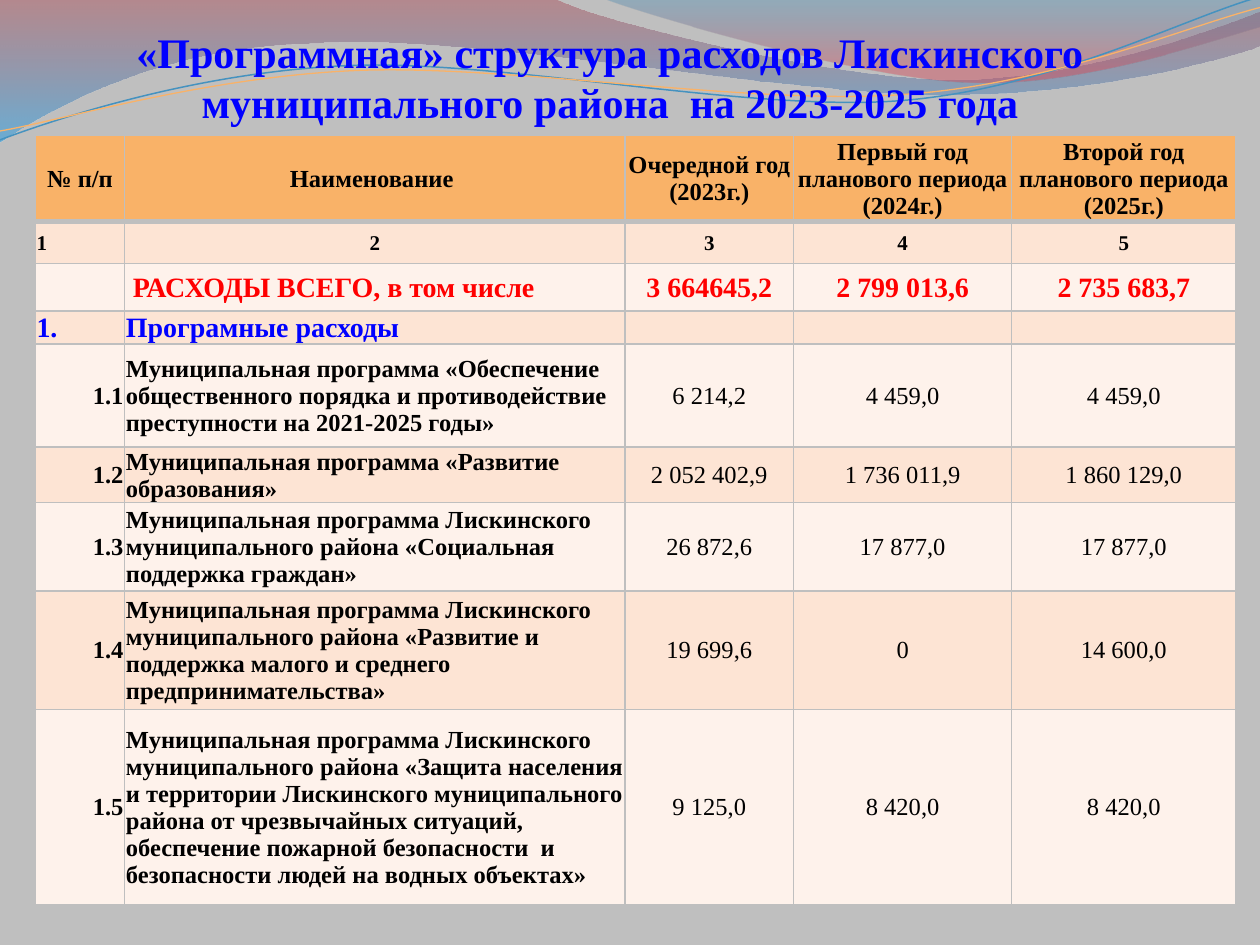
from dataclasses import dataclass
from itertools import chain
from math import cos, radians, sin

from lxml.etree import SubElement
from pptx import Presentation
from pptx.dml.color import RGBColor as RGB
from pptx.enum.text import MSO_ANCHOR as ANCHOR, MSO_AUTO_SIZE as AUTOSIZE, PP_ALIGN as ALIGN
from pptx.oxml.ns import qn
from pptx.util import Inches, Pt


@dataclass(frozen=True)
class Theme:
    """Colours, font and type sizes of the slide."""
    font: str = "Times New Roman"
    background: str = "BFBFBF"
    header: str = "F9B268"
    band_dark: str = "FDE4D4"
    band_light: str = "FEF2EB"
    text: str = "000000"
    accent: str = "0000FF"
    total: str = "FF0000"
    title_size: int = 24
    section_size: int = 16
    body_size: int = 14
    index_size: int = 12


T = Theme()

COLUMNS = [0.71, 3.97, 1.34, 1.73, 1.78]
HEIGHTS = [0.69, 0.33, 0.38, 0.26, 0.82, 0.44, 0.7, 0.94, 1.55]
HEADER = ["№ п/п", "Наименование ", "Очередной год (2023г.)",
          "Первый год планового периода (2024г.)", "Второй год планового периода (2025г.)"]
INDEX = ["1", "2", "3", "4", "5"]
TOTAL = ["", " РАСХОДЫ ВСЕГО, в том числе", "3 664645,2", "2 799 013,6", "2 735 683,7"]
SECTION = ["1.", "Програмные расходы", "", "", ""]
PROGRAMS = [
    ["1.1", "Муниципальная программа «Обеспечение общественного порядка и противодействие "
     "преступности на 2021-2025 годы»", "6 214,2", "4 459,0", "4 459,0"],
    ["1.2", "Муниципальная программа «Развитие образования»",
     "2 052 402,9", "1 736 011,9", "1 860 129,0"],
    ["1.3", "Муниципальная программа Лискинского муниципального района «Социальная "
     "поддержка граждан»", "26 872,6", "17 877,0", "17 877,0"],
    ["1.4", "Муниципальная программа Лискинского муниципального района «Развитие и поддержка "
     "малого и среднего предпринимательства»", "19 699,6", "0", "14 600,0"],
    ["1.5", "Муниципальная программа Лискинского муниципального района «Защита населения и "
     "территории Лискинского муниципального района от чрезвычайных ситуаций, обеспечение "
     "пожарной безопасности  и безопасности людей на водных объектах»",
     "9 125,0", "8 420,0", "8 420,0"],
]

LEFT_WAVE = [
    (0, 0), (4.4, -0.01), (4.76, 0.17, 6.64, 0.63, 7.58, 0.63), (8.53, 0.63, 9.58, 0.26, 10, 0.09),
    (10.01, 0.36), (9.83, 0.44, 8.7, 0.76, 7.46, 0.75), (6.22, 0.75, 3.82, 0.28, 2.57, 0.34),
    (1.29, 0.36, 0.46, 0.83, -0.01, 1.13)]
RIGHT_WAVE = [
    (4.79, -0.01), (5.09, 0.11, 6.82, 0.62, 7.69, 0.65), (8.56, 0.69, 9.61, 0.32, 10, 0.21), (10, 0)]
BLUE_LINE = [
    (0, 1.11), (0.48, 0.93, 1.58, 0.57, 2.77, 0.52), (3.95, 0.47, 5.93, 0.89, 7.13, 0.8),
    (8.33, 0.71, 9.38, 0.15, 9.98, -0.02)]
ORANGE_LINE = [
    (0, 1.04), (0.47, 0.96, 1.64, 0.61, 2.83, 0.56), (4.03, 0.51, 5.97, 0.84, 7.17, 0.75),
    (8.36, 0.67, 9.41, 0.21, 10, 0.06)]
TILT = 2.7


def turn(step, center, degrees):
    """Rotate the points of one step about a center."""
    a, (cx, cy) = radians(degrees), center
    pairs = [(x - cx, y - cy) for x, y in zip(step[::2], step[1::2])]
    return tuple(chain.from_iterable(
        (cx + x * cos(a) - y * sin(a), cy + x * sin(a) + y * cos(a)) for x, y in pairs))


class Deck:
    """Holds the theme and the current slide."""

    def __init__(self, prs, theme):
        """Add a title-only slide with a plain background."""
        self.theme = theme
        self.s = prs.slides.add_slide(prs.slide_layouts[5])
        fill = self.s.background.fill
        fill.solid()
        fill.fore_color.rgb = RGB.from_string(theme.background)

    def outline(self, steps, close):
        """Draw a freeform of lines (two numbers) and Bézier curves (six numbers)."""
        points = [(Inches(x), Inches(y))
                  for step in steps for x, y in zip(step[::2], step[1::2])]
        builder = self.s.shapes.build_freeform(*points[0], scale=1.0)
        builder.add_line_segments(points[1:], close=close)
        sp = builder.convert_to_shape()
        sp.shadow.inherit = False
        segments = iter(list(sp.element.spPr.iter(qn("a:lnTo"))))
        for step in steps[1:]:
            first = next(segments)
            if len(step) == 6:
                first.tag = qn("a:cubicBezTo")
                for _ in range(2):
                    extra = next(segments)
                    first.append(extra[0])
                    extra.getparent().remove(extra)
        return sp

    def wave(self, steps, stops):
        """Draw a closed wave with a translucent top-to-bottom gradient."""
        sp = self.outline(steps, True)
        sp.line.fill.background()
        sp.fill.gradient()
        sp.fill.gradient_angle = 270
        for stop, (position, color, _) in zip(sp.fill.gradient_stops, stops):
            stop.position = position
            stop.color.rgb = RGB.from_string(color)
        for clr, (_, _, alpha) in zip(sp.element.spPr.iter(qn("a:srgbClr")), stops):
            SubElement(clr, qn("a:alpha"), val=str(alpha * 1000))

    def curve(self, steps, center, color, width):
        """Draw an open curved line in a tilted frame."""
        sp = self.outline([turn(step, center, TILT) for step in steps], False)
        sp.rotation = 360 - TILT
        sp.fill.background()
        sp.line.color.rgb = RGB.from_string(color)
        sp.line.width = Pt(width)

    def style(self, p, size, color, bold, align):
        """Format one paragraph and its runs."""
        p.alignment = align
        for r in p.runs:
            r.font.name, r.font.size, r.font.bold = self.theme.font, Pt(size), bold
            r.font.color.rgb = RGB.from_string(color)
        if not p.runs:
            end = SubElement(p._p, qn("a:endParaRPr"), sz=str(size * 100))
            SubElement(end, qn("a:latin"), typeface=self.theme.font)

    def title(self, text, x, y, w, h):
        """Place the title in front of the waves."""
        sp = self.s.shapes.title
        sp.element.getparent().append(sp.element)
        sp.left, sp.top, sp.width, sp.height = map(Inches, (x, y, w, h))
        tf = sp.text_frame
        tf.text = text
        tf.word_wrap, tf.auto_size = True, AUTOSIZE.NONE
        tf.vertical_anchor = ANCHOR.BOTTOM
        tf.margin_left = tf.margin_right = tf.margin_bottom = 0
        tf.margin_top = Inches(0.05)
        self.style(tf.paragraphs[0], self.theme.title_size, self.theme.accent, True, ALIGN.CENTER)

    def table(self, x, y, widths, heights):
        """Add an empty table with the given grid."""
        frame = self.s.shapes.add_table(len(heights), len(widths), Inches(x), Inches(y),
                                        Inches(sum(widths)), Inches(sum(heights)))
        for column, width in zip(frame.table.columns, widths):
            column.width = Inches(width)
        for row, height in zip(frame.table.rows, heights):
            row.height = Inches(height)
        return frame.table

    def cell(self, cell, text, fill, size, color, bold, align, bottom=1):
        """Fill, frame and write one table cell."""
        cell.margin_left = cell.margin_top = cell.margin_right = Inches(0.01)
        cell.margin_bottom = 0
        cell.vertical_anchor = ANCHOR.MIDDLE
        tc_pr = cell._tc.get_or_add_tcPr()
        for side, width in (("L", 1), ("R", 1), ("T", 1), ("B", bottom)):
            ln = SubElement(tc_pr, qn(f"a:ln{side}"), w=str(Pt(width)))
            SubElement(SubElement(ln, qn("a:solidFill")), qn("a:srgbClr"), val=self.theme.background)
        cell.fill.solid()
        cell.fill.fore_color.rgb = RGB.from_string(fill)
        tc_pr.append(tc_pr.find(qn("a:solidFill")))
        cell.text_frame.text = text
        self.style(cell.text_frame.paragraphs[0], size, color, bold, align)


def main():
    """Build the slide and save it."""
    prs = Presentation()
    prs.slide_width, prs.slide_height = Inches(10), Inches(7.5)
    deck = Deck(prs, T)
    deck.wave(LEFT_WAVE, [(0, "A84752", 45), (1, "249FE6", 55)])
    deck.wave(RIGHT_WAVE, [(0, "2A7EAF", 30), (0.8, "D24B5A", 45)])
    deck.curve(BLUE_LINE, (4.99, 0.58), "4592BF", 0.85)
    deck.curve(ORANGE_LINE, (5, 0.59), T.header, 0.75)
    deck.title("«Программная» структура расходов Лискинского муниципального района  "
               "на 2023-2025 года", 0.23, 0.23, 9.22, 0.78)

    left, center, right = ALIGN.LEFT, ALIGN.CENTER, ALIGN.RIGHT
    rows = [(HEADER, T.body_size, T.text, (center, center)),
            (INDEX, T.index_size, T.text, (left, center)),
            (TOTAL, T.section_size, T.total, (left, left)),
            (SECTION, T.section_size, T.accent, (left, left))]
    rows += [(program, T.body_size, T.text, (right, left)) for program in PROGRAMS]
    table = deck.table(0.28, 1.07, COLUMNS, HEIGHTS)
    for i, (texts, size, color, aligns) in enumerate(rows):
        fill = T.header if i == 0 else T.band_dark if i % 2 else T.band_light
        for j, text in enumerate(texts):
            bold = i < 4 or j < 2
            align = aligns[j] if j < 2 else center
            deck.cell(table.cell(i, j), text, fill, size, color, bold, align, 1 if i else 3)
    prs.save("out.pptx")


if __name__ == "__main__":
    main()
